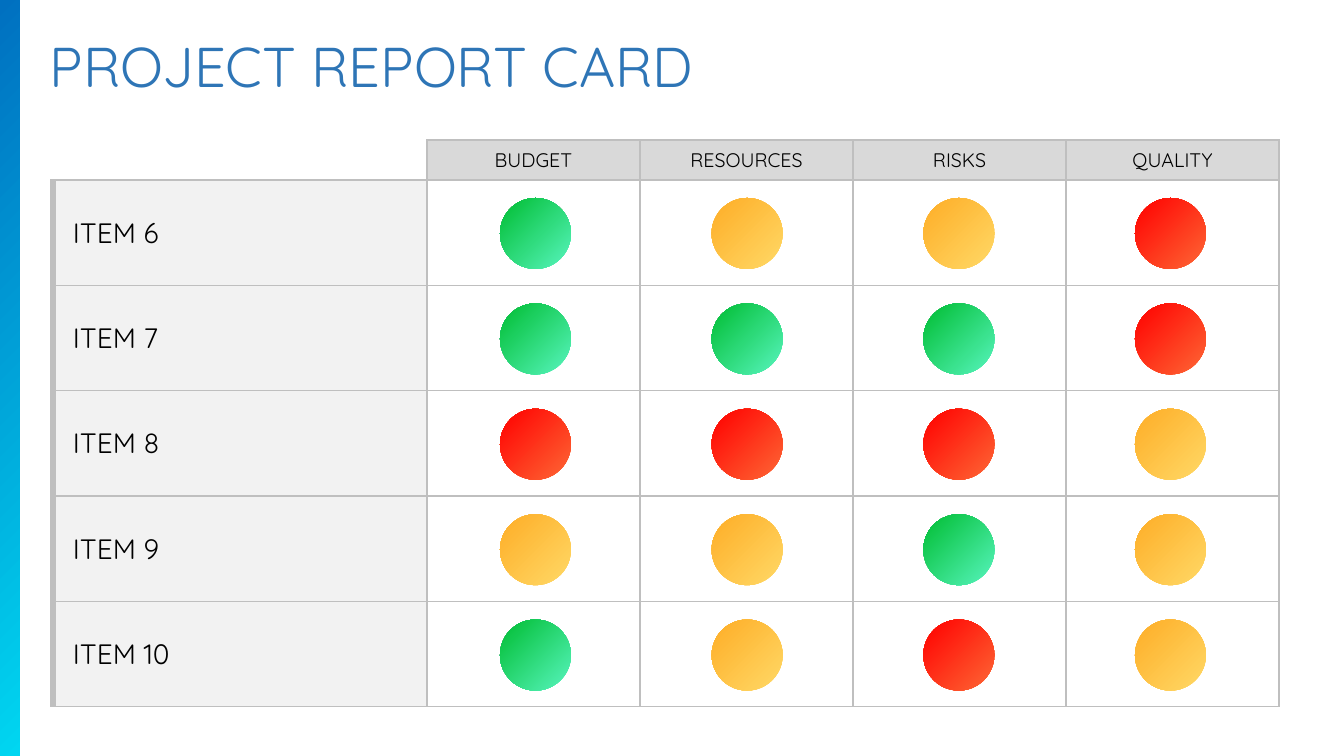
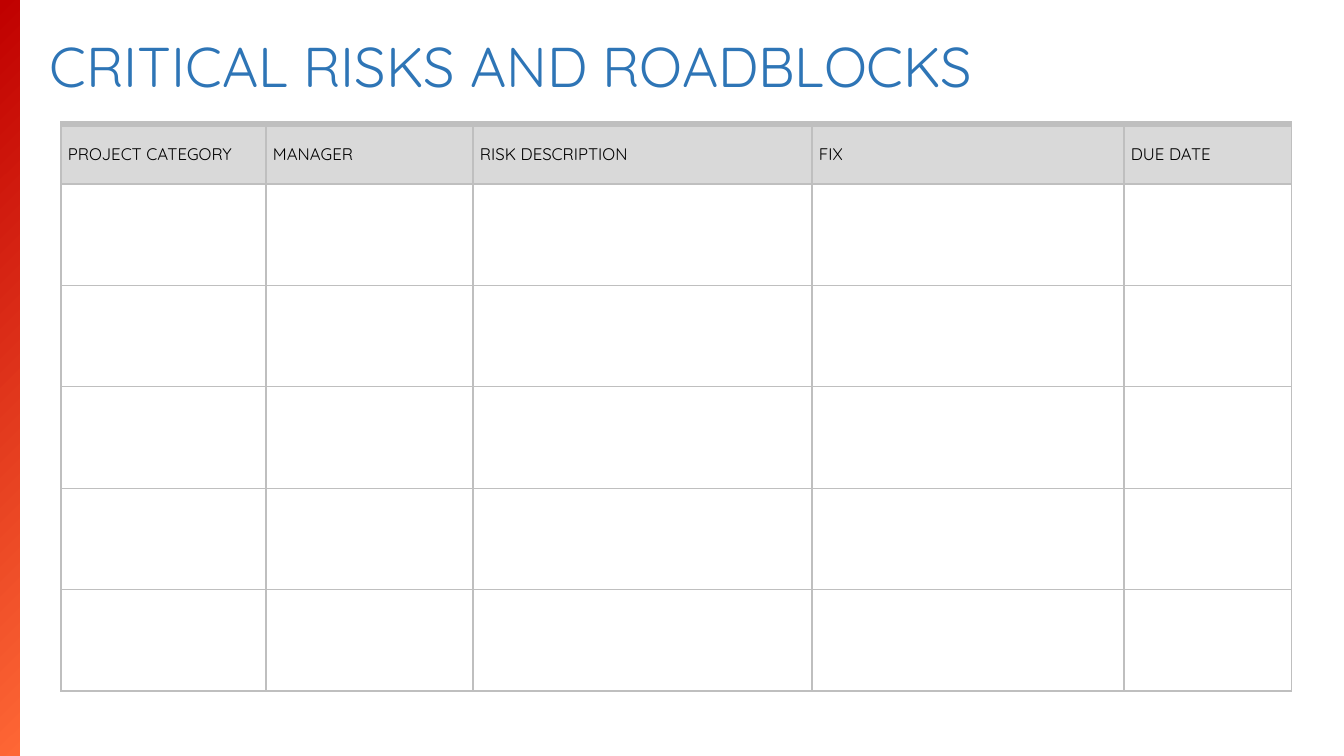
import lxml.etree
import pptx
import pptx.dml.color
import pptx.enum.dml
import pptx.enum.shapes
import pptx.enum.text
import pptx.oxml.ns
import pptx.util

RGB = pptx.dml.color.RGBColor
SHAPE = pptx.enum.shapes.MSO_SHAPE
ANCHOR = pptx.enum.text.MSO_ANCHOR
ALIGN = pptx.enum.text.PP_ALIGN

# Colours
TITLE_BLUE = RGB(0x2E, 0x75, 0xB6)
BLACK = RGB(0x00, 0x00, 0x00)
WHITE = RGB(0xFF, 0xFF, 0xFF)
HEAD_GREY = RGB(0xD9, 0xD9, 0xD9)
ITEM_GREY = RGB(0xF2, 0xF2, 0xF2)
BORDER_GREY = RGB(0xBF, 0xBF, 0xBF)
CYAN, DEEP_BLUE = RGB(0x00, 0xD6, 0xF1), RGB(0x00, 0x70, 0xC0)
MINT, GREEN = RGB(0x58, 0xF5, 0xBE), RGB(0x00, 0xBD, 0x32)
ORANGE, RED = RGB(0xFE, 0x67, 0x35), RGB(0xFF, 0x00, 0x00)
DARK_RED = RGB(0xC0, 0x00, 0x00)
YELLOW, AMBER = RGB(0xFF, 0xD9, 0x66), RGB(0xFE, 0xAD, 0x27)

# Gradients run from the lower right to the upper left
STATUS = {"G": (MINT, GREEN), "Y": (YELLOW, AMBER), "R": (ORANGE, RED)}

FONT = "Quicksand"
EMU_PER_PX = 914400 / 100.8
WIDTH, HEIGHT = 1344, 756
THIN, THICK = 1, 4.5
GRID = {"L": THIN, "R": THIN, "T": THIN, "B": THIN}


def px(length):
    return pptx.util.Emu(round(length * EMU_PER_PX))


def apply(target, values):
    for name, value in values.items():
        setattr(target, name, value)


class Report:
    def __init__(self):
        self.deck = pptx.Presentation()
        apply(self.deck, {"slide_width": px(WIDTH), "slide_height": px(HEIGHT)})
        self.page = None

    def start_page(self, title, title_width, band_colors):
        self.page = self.deck.slides.add_slide(self.deck.slide_layouts[6])
        box = self.page.shapes.add_textbox(*map(px, (40, 27, title_width, 78)))
        apply(box.text_frame, {
            "word_wrap": False,
            "auto_size": pptx.enum.text.MSO_AUTO_SIZE.SHAPE_TO_FIT_TEXT,
        })
        self.add_text(box.text_frame, title, 40, TITLE_BLUE)
        self.gradient_shape(SHAPE.RECTANGLE, 0, 0, 20, HEIGHT, band_colors)

    def add_text(self, frame, text, size, color=BLACK, align=ALIGN.LEFT):
        para = frame.paragraphs[0]
        para.alignment = align
        span = para.add_run()
        span.text = text
        apply(span.font, {"name": FONT, "size": pptx.util.Pt(size)})
        span.font.color.rgb = color

    def gradient_shape(self, kind, left, top, width, height, colors):
        shape = self.page.shapes.add_shape(
            kind, *map(px, (left, top, width, height)))
        shape.shadow.inherit = False
        shape.line.fill.background()
        shape.fill.gradient()
        shape.fill.gradient_angle = 135
        for stop, color in zip(shape.fill.gradient_stops, colors):
            stop.color.rgb = color

    def table(self, left, top, columns, head_height, row_height, row_count):
        height = head_height + row_height * row_count
        table = self.page.shapes.add_table(
            row_count + 1, len(columns),
            *map(px, (left, top, sum(columns), height))).table
        apply(table, {"first_row": False, "horz_banding": False})
        for column, width in zip(table.columns, columns):
            column.width = px(width)
        for index, row in enumerate(table.rows):
            row.height = px(row_height if index else head_height)
        return table

    def cell(self, cell, text="", size=12, fill=WHITE, borders=GRID,
             align=ALIGN.LEFT, inset=6, right_inset=6):
        apply(cell, {
            "vertical_anchor": ANCHOR.MIDDLE,
            "margin_left": px(inset), "margin_right": px(right_inset),
            "margin_top": 0, "margin_bottom": 0,
        })
        if fill is None:
            cell.fill.background()
        else:
            cell.fill.solid()
            cell.fill.fore_color.rgb = fill
        self.borders(cell, borders)
        if text:
            self.add_text(cell.text_frame, text, size, align=align)

    def borders(self, cell, widths):
        # Border lines come before the fill; a side without width is hidden
        tag = pptx.oxml.ns.qn
        properties = cell._tc.get_or_add_tcPr()
        for index, side in enumerate("LRTB"):
            line = lxml.etree.Element(tag(f"a:ln{side}"))
            properties.insert(index, line)
            if side in widths:
                line.set("w", str(pptx.util.Pt(widths[side])))
                paint = lxml.etree.SubElement(line, tag("a:solidFill"))
                lxml.etree.SubElement(
                    paint, tag("a:srgbClr"), val=str(BORDER_GREY))
            else:
                lxml.etree.SubElement(line, tag("a:noFill"))


def report_card(report):
    report.start_page("PROJECT REPORT CARD", 666, (CYAN, DEEP_BLUE))
    headings = ["BUDGET", "RESOURCES", "RISKS", "QUALITY"]
    items = {
        "ITEM 6": "GYYR",
        "ITEM 7": "GGGR",
        "ITEM 8": "RRRY",
        "ITEM 9": "YYGY",
        "ITEM 10": "GYRY",
    }
    row_height = 527 / len(items)
    table = report.table(53, 140, [374] + [213] * len(headings),
                         40, row_height, len(items))

    # Heading row, with an open corner
    report.cell(table.cell(0, 0), fill=None, borders={"R": THIN, "B": THIN})
    for column, heading in enumerate(headings, 1):
        report.cell(table.cell(0, column), heading, 14, HEAD_GREY,
                    align=ALIGN.CENTER)

    # Items and their status lights
    for row, (item, statuses) in enumerate(items.items()):
        report.cell(table.cell(row + 1, 0), item, 20, ITEM_GREY,
                    GRID | {"L": THICK}, inset=20)
        for column, status in enumerate(statuses):
            report.cell(table.cell(row + 1, column + 1))
            report.gradient_shape(
                SHAPE.OVAL, 500 + column * 635 / 3, 198 + row * row_height,
                71, 71, STATUS[status])


def critical_risks(report):
    report.start_page("CRITICAL RISKS AND ROADBLOCKS", 957, (ORANGE, DARK_RED))
    columns = {
        "PROJECT CATEGORY": 205,
        "MANAGER": 207,
        "RISK DESCRIPTION": 339,
        "FIX": 312,
        "DUE DATE": 168,
    }
    row_count = 5
    table = report.table(61, 124, list(columns.values()),
                         60, 507 / row_count, row_count)
    for column, heading in enumerate(columns):
        report.cell(table.cell(0, column), heading, 12, HEAD_GREY,
                    GRID | {"T": THICK}, inset=7, right_inset=7)
        for row in range(1, row_count + 1):
            report.cell(table.cell(row, column))


def main():
    report = Report()
    report_card(report)
    critical_risks(report)
    report.deck.save("out.pptx")


if __name__ == "__main__":
    main()
